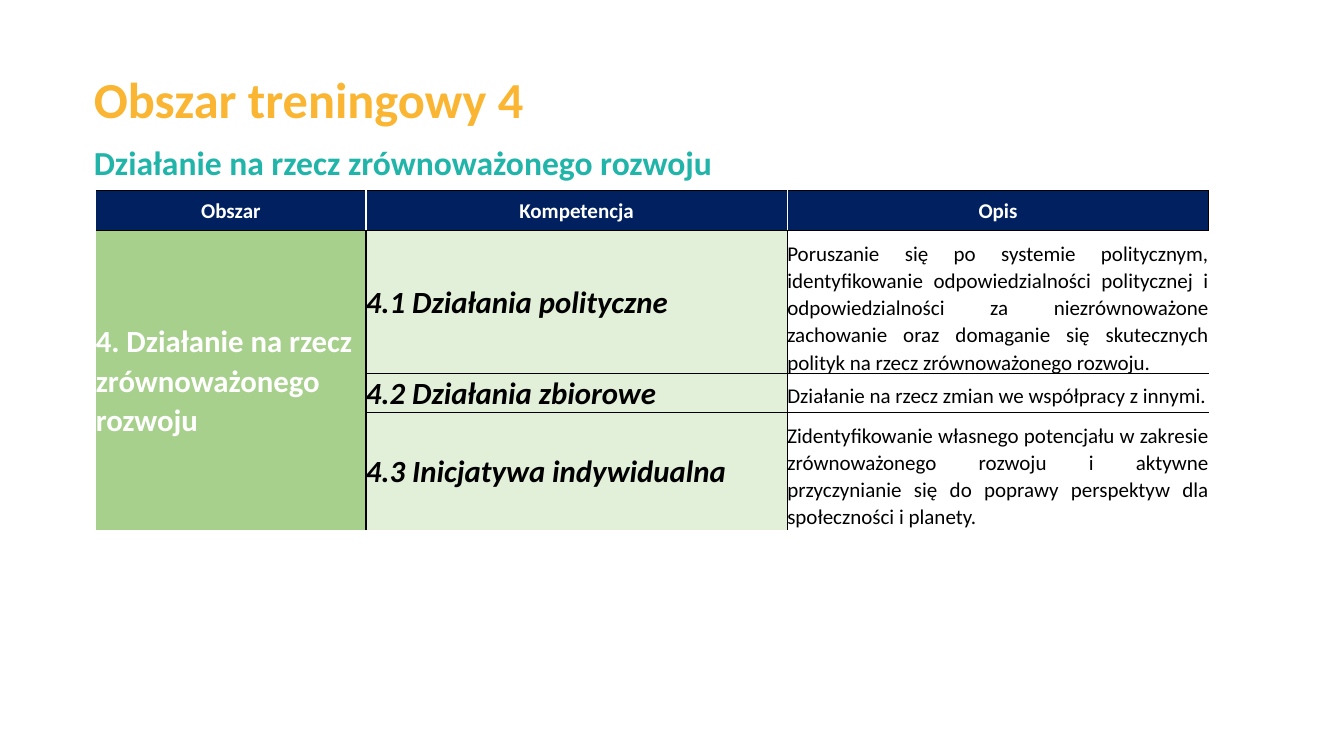
from lxml.etree import SubElement
from pptx import Presentation
from pptx.dml.color import RGBColor
from pptx.enum.text import MSO_ANCHOR, PP_ALIGN
from pptx.oxml.ns import qn
from pptx.util import Pt

FONT = "Calibri"
BLACK, WHITE, NAVY = "000000", "FFFFFF", "002060"
GREEN, PALE_GREEN = "A8D08D", "E2EFD9"

HEADINGS = [
    ("Obszar treningowy 4", 45.4, 640, 43.2, 36, "FAB632"),
    ("Działanie na rzecz zrównoważonego rozwoju", 97.9, 598, 31, 24, "21B4A9"),
]
COLUMN_NAMES = ["Obszar", "Kompetencja", "Opis"]
AREA = "4. Działanie na rzecz zrównoważonego rozwoju"
COMPETENCES = [
    ("4.1 Działania polityczne",
     "Poruszanie się po systemie politycznym, identyfikowanie odpowiedzialności "
     "politycznej i odpowiedzialności za niezrównoważone zachowanie oraz domaganie "
     "się skutecznych polityk na rzecz zrównoważonego rozwoju."),
    ("4.2 Działania zbiorowe",
     "Działanie na rzecz zmian we współpracy z innymi."),
    ("4.3 Inicjatywa indywidualna",
     "Zidentyfikowanie własnego potencjału w zakresie zrównoważonego rozwoju i aktywne "
     "przyczynianie się do poprawy perspektyw dla społeczności i planety."),
]
HEADING_LEFT, TABLE_LEFT, HEADER_TOP = 63.4, 68.4, 136
COLUMN_WIDTHS = [193, 301, 301]
HEADER_HEIGHT = 28.8
BODY_HEIGHTS = [100.5, 28, 82.5]
DESCRIPTION_INSET = 6.5


def rgb(hex_color):
    return RGBColor.from_string(hex_color)


def style(paragraph, size, color, bold=True, italic=False):
    font = paragraph.font
    font.name, font.size, font.bold, font.italic = FONT, Pt(size), bold, italic
    font.color.rgb = rgb(color)


def add_heading(slide, text, top, width, height, size, color):
    box = slide.shapes.add_textbox(Pt(HEADING_LEFT), Pt(top), Pt(width), Pt(height))
    frame = box.text_frame
    frame.word_wrap = True
    frame.margin_left = frame.margin_right = Pt(3.6)
    frame.margin_top = frame.margin_bottom = Pt(3.6)
    frame.text = text
    style(frame.paragraphs[0], size, color)


def add_grid(slide, top, heights):
    height = sum(heights)
    grid = slide.shapes.add_table(len(heights), len(COLUMN_WIDTHS), Pt(TABLE_LEFT), Pt(top),
                                  Pt(sum(COLUMN_WIDTHS)), Pt(height)).table
    grid.first_row = grid.horz_banding = False
    for column, width in zip(grid.columns, COLUMN_WIDTHS):
        column.width = Pt(width)
    for row, row_height in zip(grid.rows, heights):
        row.height = Pt(row_height)
    return grid


def set_borders(cell, left, right, top, bottom):
    properties = cell._tc.get_or_add_tcPr()
    for side, color in zip("LRTB", (left, right, top, bottom)):
        line = SubElement(properties, qn(f"a:ln{side}"), w=str(Pt(1)))
        if color:
            fill = SubElement(line, qn("a:solidFill"))
            SubElement(fill, qn("a:srgbClr"), val=color)
        else:
            SubElement(line, qn("a:noFill"))


def fill_cell(cell, text, fill, align, size, color, bold=True, italic=False):
    cell.margin_left = cell.margin_right = cell.margin_top = cell.margin_bottom = 0
    cell.vertical_anchor = MSO_ANCHOR.MIDDLE
    if fill:
        cell.fill.solid()
        cell.fill.fore_color.rgb = rgb(fill)
    else:
        cell.fill.background()
    cell.text = text
    paragraph = cell.text_frame.paragraphs[0]
    paragraph.alignment = align
    paragraph.line_spacing = 1.06
    style(paragraph, size, color, bold, italic)


def add_header(slide):
    grid = add_grid(slide, HEADER_TOP, [HEADER_HEIGHT])
    last = len(COLUMN_NAMES) - 1
    for index, name in enumerate(COLUMN_NAMES):
        cell = grid.cell(0, index)
        set_borders(cell, WHITE if index else None, WHITE if index < last else BLACK,
                    BLACK, BLACK)
        fill_cell(cell, name, NAVY, PP_ALIGN.CENTER, 15, WHITE)


def add_body(slide):
    grid = add_grid(slide, HEADER_TOP + HEADER_HEIGHT, BODY_HEIGHTS)
    last = len(COMPETENCES) - 1
    area = grid.cell(0, 0)
    area.merge(grid.cell(last, 0))
    for index, (competence, description) in enumerate(COMPETENCES):
        area_part, competence_cell, description_cell = (grid.cell(index, c) for c in range(3))
        bottom = BLACK if index < last else None
        set_borders(area_part, None, BLACK, None if index else BLACK, None)
        set_borders(competence_cell, BLACK, BLACK, BLACK, bottom)
        set_borders(description_cell, BLACK, None, BLACK, bottom)
        fill_cell(competence_cell, competence, PALE_GREEN, PP_ALIGN.JUSTIFY, 22, BLACK,
                  italic=True)
        fill_cell(description_cell, description, None, PP_ALIGN.JUSTIFY, 15, BLACK, bold=False)
        description_cell.vertical_anchor = MSO_ANCHOR.TOP
        description_cell.margin_top = Pt(DESCRIPTION_INSET)
    fill_cell(area, AREA, GREEN, PP_ALIGN.LEFT, 22, WHITE)


def main():
    presentation = Presentation()
    presentation.slide_width, presentation.slide_height = Pt(960), Pt(540)
    slide = presentation.slides.add_slide(presentation.slide_layouts[6])
    for heading in HEADINGS:
        add_heading(slide, *heading)
    add_header(slide)
    add_body(slide)
    presentation.save("out.pptx")


if __name__ == "__main__":
    main()
